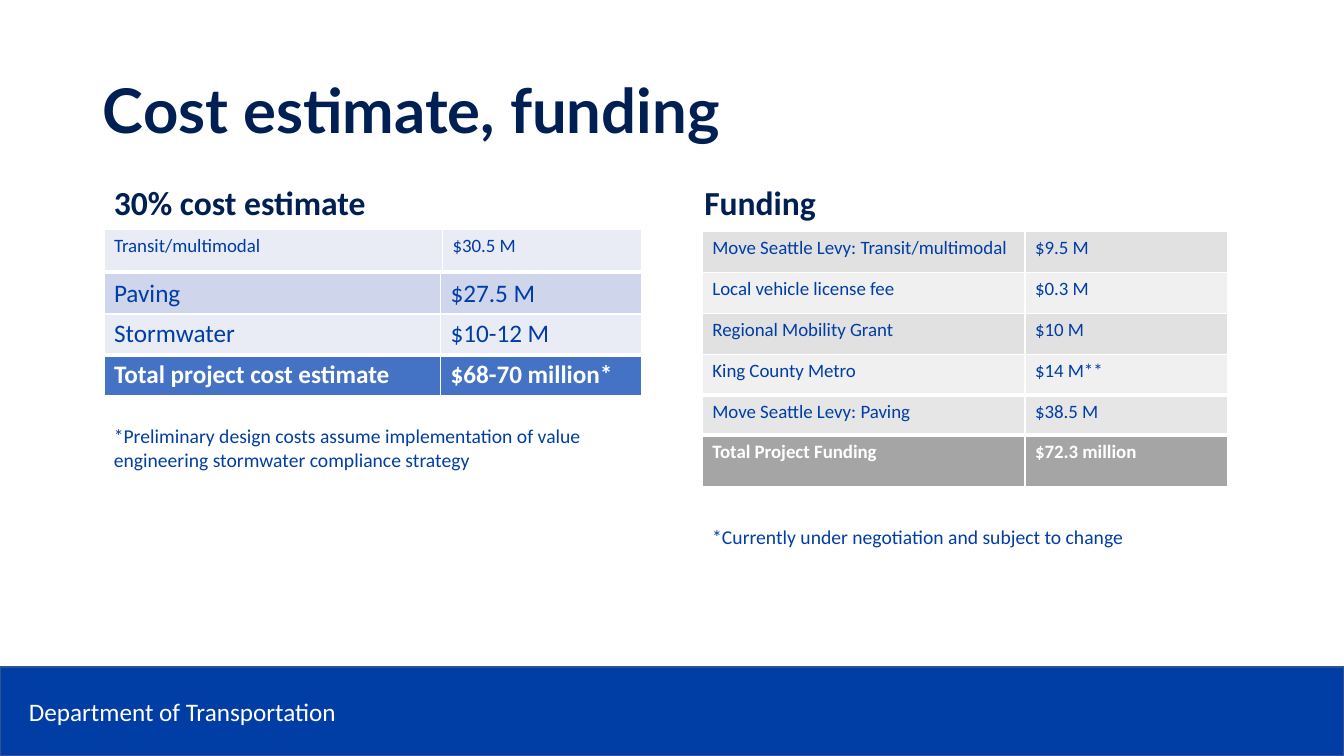
from pptx import Presentation
from pptx.dml.color import RGBColor
from pptx.enum import shapes, text
from pptx.oxml import parse_xml
from pptx.oxml.ns import nsdecls
from pptx.util import Cm, Pt

BLUE, NAVY, WHITE = "003DA5", "001F52", "FFFFFF"
SLIDE_W, SLIDE_H = 33.87, 19.05
ROW_H = 1.03
TOTAL_FILLS = ("4472C4", "A5A5A5")
RULED_FILLS = TOTAL_FILLS + ("E7E6E6",)  # rows under a heavy rule


def rgb(value):
    return RGBColor.from_string(value)


def style(p, size, color, bold=False, name="Calibri"):
    p.font.size, p.font.bold, p.font.name = Pt(size), bold, name
    p.font.color.rgb = rgb(color)


def add_text(s, box, content, size, color, bold=False, wrap=True):
    sp = s.shapes.add_textbox(*map(Cm, box))
    tf = sp.text_frame
    tf.word_wrap = wrap
    tf.auto_size = text.MSO_AUTO_SIZE.SHAPE_TO_FIT_TEXT
    tf.text = content
    style(tf.paragraphs[0], size, color, bold)


def set_borders(cell, top):
    """White lines on all four sides, the top one of the given width in points."""
    tc_pr = cell._tc.get_or_add_tcPr()
    for i, (side, width) in enumerate((("L", 1), ("R", 1), ("T", top), ("B", 1))):
        tc_pr.insert(i, parse_xml(
            f'<a:ln{side} {nsdecls("a")} w="{Pt(width)}"><a:solidFill>'
            f'<a:srgbClr val="{WHITE}"/></a:solidFill></a:ln{side}>'))


def add_money_table(s, left, top, widths, row_h, size, rows):
    """Each row is (label, amount, fill)."""
    table = s.shapes.add_table(len(rows), 2, Cm(left), Cm(top), Cm(sum(widths)),
                               Cm(row_h * len(rows))).table
    table.first_row = table.horz_banding = False
    for column, width in zip(table.columns, widths):
        column.width = Cm(width)
    for r, (*values, fill) in enumerate(rows):
        total = fill in TOTAL_FILLS
        for c, value in enumerate(values):
            cell = table.cell(r, c)
            cell.text = value
            cell.fill.solid()
            cell.fill.fore_color.rgb = rgb(fill)
            set_borders(cell, 3 if fill in RULED_FILLS else 1)
            style(cell.text_frame.paragraphs[0], size, WHITE if total else BLUE, total)


def add_money_region(s, box, heading, heading_shift, heading_w, tables, note, note_h):
    """Heading, tables (each with its drop below the region's top) and a note at the foot."""
    left, top, width, height = box
    add_text(s, (left + heading_shift, top, heading_w, 1.27), heading, 24, NAVY, True, False)
    for drop, *spec in tables:
        add_money_table(s, left, top + drop, *spec)
    add_text(s, (left, top + height - note_h, width, note_h), note, 14, BLUE)


def add_title(s, box, content):
    sp = s.shapes.title
    sp.left, sp.top, sp.width, sp.height = map(Cm, box)
    tf = sp.text_frame
    tf.text = content
    tf.auto_size = text.MSO_AUTO_SIZE.NONE
    tf.vertical_anchor = text.MSO_ANCHOR.MIDDLE
    p = tf.paragraphs[0]
    p.alignment, p.line_spacing = text.PP_ALIGN.LEFT, 0.9
    style(p, 44, NAVY, True, "Lato")


def add_footer(s, box, content):
    left, top, _, _ = box
    sp = s.shapes.add_shape(shapes.MSO_SHAPE.RECTANGLE, *map(Cm, box))
    sp.shadow.inherit = False
    sp.fill.solid()
    sp.fill.fore_color.rgb = rgb(BLUE)
    sp.line.color.rgb = rgb("31538F")
    sp.line.width = Pt(1)
    add_text(s, (left + 0.48, top + 0.61, 8.84, 1.02), content, 18, WHITE)


def main():
    prs = Presentation()
    prs.slide_width, prs.slide_height = Cm(SLIDE_W), Cm(SLIDE_H)
    s = prs.slides.add_slide(prs.slide_layouts[5])
    add_footer(s, (0, 16.81, SLIDE_W, 2.24), "Department of Transportation")
    add_title(s, (2.34, 1.02, 29.21, 3.68), "Cost estimate, funding")

    cost_tables = [
        (1.32, (8.53, 5.03), ROW_H, 13.5, [("Transit/multimodal", "$30.5 M", "E9EBF5")]),
        (2.41, (8.48, 5.06), ROW_H, 18, [
            ("Paving", "$27.5 M", "CFD5EA"),
            ("Stormwater", "$10-12 M", "E9EBF5"),
            ("Total project cost estimate", "$68-70 million*", "4472C4")]),
    ]
    funding_widths = (8.13, 5.11)
    funding_tables = [
        (1.37, funding_widths, ROW_H, 13.5, [
            ("Move Seattle Levy: Transit/multimodal", "$9.5 M", "E1E1E1"),
            ("Local vehicle license fee", "$0.3 M", "F0F0F0"),
            ("Regional Mobility Grant", "$10 M", "E1E1E1"),
            ("King County Metro", "$14 M**", "F0F0F0"),
            ("Move Seattle Levy: Paving", "$38.5 M", "E7E6E6")]),
        (6.5, funding_widths, 1.3, 13.5,
         [("Total Project Funding", "$72.3 million", "A5A5A5")]),
    ]
    add_money_region(s, (2.62, 4.47, 13.56, 7.55), "30% cost estimate", 0, 6.93, cost_tables,
                     "*Preliminary design costs assume implementation of value "
                     "engineering stormwater compliance strategy", 1.45)
    add_money_region(s, (17.7, 4.47, 13.56, 9.5), "Funding", -0.2, 3.35, funding_tables,
                     "*Currently under negotiation and subject to change", 0.86)
    prs.save("out.pptx")


if __name__ == "__main__":
    main()
